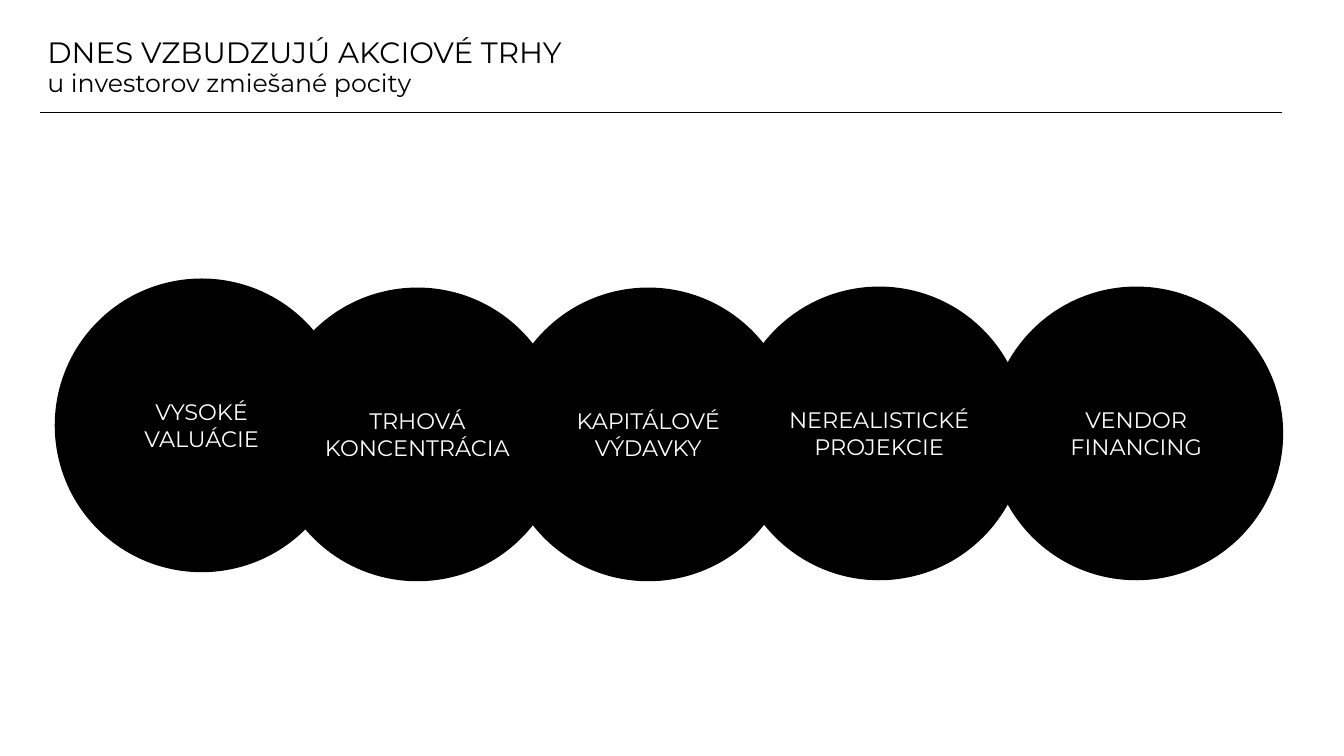
from lxml import etree
from pptx import Presentation
from pptx.dml.color import RGBColor
from pptx.enum.shapes import MSO_CONNECTOR, MSO_SHAPE
from pptx.enum.text import MSO_ANCHOR, MSO_AUTO_SIZE, PP_ALIGN
from pptx.oxml.ns import qn
from pptx.util import Inches, Pt

BLACK = RGBColor(0x00, 0x00, 0x00)
WHITE = RGBColor(0xFF, 0xFF, 0xFF)
FONT = "Montserrat"
STRAIGHT = MSO_CONNECTOR.STRAIGHT
OVAL = MSO_SHAPE.OVAL
MIDDLE = MSO_ANCHOR.MIDDLE
NO_AUTOFIT = MSO_AUTO_SIZE.NONE
LEFT, CENTER = PP_ALIGN.LEFT, PP_ALIGN.CENTER

MARGIN, CONTENT_WIDTH = 0.4, 12.32
DIAMETER = 2.9

TITLE_LINES = [
    ("DNES VZBUDZUJÚ AKCIOVÉ TRHY", 21),
    ("u investorov zmiešané pocity", 18),
]
# Label, left and top of each circle, from back to front
CONCERNS = [
    ("VYSOKÉ VALUÁCIE", 0.55, 2.77),
    ("KAPITÁLOVÉ VÝDAVKY", 4.98, 2.86),
    ("NEREALISTICKÉ PROJEKCIE", 7.27, 2.85),
    ("VENDOR FINANCING", 9.82, 2.85),
    ("TRHOVÁ KONCENTRÁCIA", 2.69, 2.86),
]


def format_paragraph(p, size, color, align):
    p.alignment = align
    for r in p.runs:
        r.font.name = FONT
        r.font.size = Pt(size)
        r.font.color.rgb = color


def add_title(s):
    title = s.shapes.title
    title.left, title.top = Inches(MARGIN), Inches(0.31)
    title.width, title.height = Inches(CONTENT_WIDTH), Inches(0.73)
    tf = title.text_frame
    tf.text = "\n".join(text for text, _ in TITLE_LINES)
    tf.word_wrap = True
    tf.auto_size = NO_AUTOFIT
    tf.vertical_anchor = MIDDLE
    tf.margin_left = tf.margin_right = Inches(0.07)
    tf.margin_top = tf.margin_bottom = Inches(0.04)
    for p, (_, size) in zip(tf.paragraphs, TITLE_LINES):
        p.line_spacing = 0.9
        p.space_before = Pt(0)
        format_paragraph(p, size, BLACK, LEFT)


def add_rule(s, y):
    line = s.shapes.add_connector(
        STRAIGHT, Inches(MARGIN), Inches(y), Inches(MARGIN + CONTENT_WIDTH), Inches(y))
    line.line.color.rgb = BLACK
    line.line.width = Pt(0.5)
    etree.SubElement(line._element.spPr, qn("a:effectLst"))


def add_circle(s, label, left, top):
    sp = s.shapes.add_shape(
        OVAL, Inches(left), Inches(top), Inches(DIAMETER), Inches(DIAMETER))
    sp.shadow.inherit = False
    sp.fill.solid()
    sp.fill.fore_color.rgb = BLACK
    sp.line.color.rgb = BLACK
    sp.line.width = Pt(1)
    tf = sp.text_frame
    tf.text = label
    tf.word_wrap = True
    tf.vertical_anchor = MIDDLE
    format_paragraph(tf.paragraphs[0], 16, WHITE, CENTER)


def main():
    prs = Presentation()
    prs.slide_width, prs.slide_height = Inches(13.33), Inches(7.5)
    s = prs.slides.add_slide(prs.slide_layouts.get_by_name("Title Only"))

    # Heading
    add_rule(s, 1.11)
    add_title(s)

    # Overlapping circles
    for label, left, top in CONCERNS:
        add_circle(s, label, left, top)

    prs.save("out.pptx")


if __name__ == "__main__":
    main()
